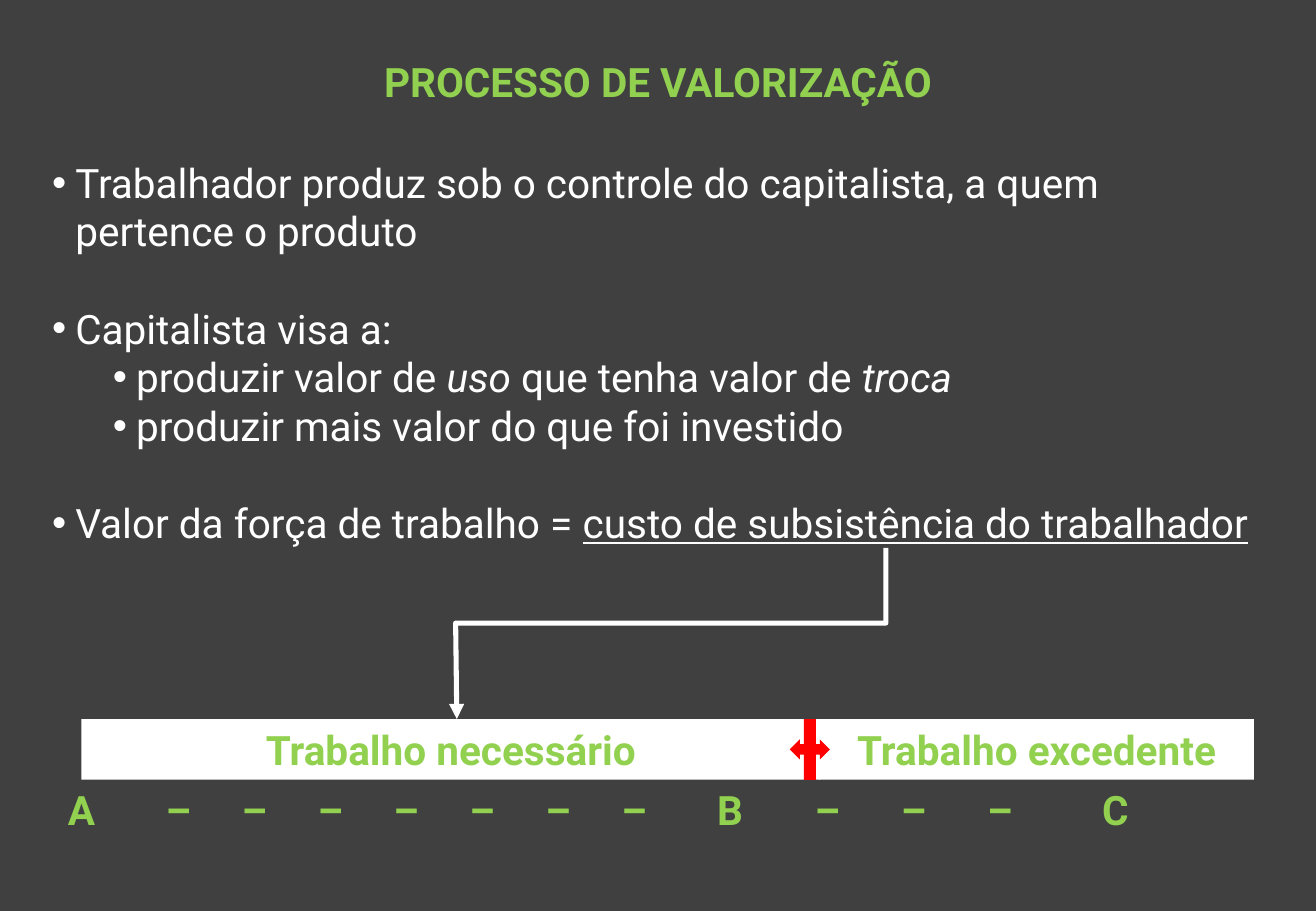
from dataclasses import dataclass

from lxml.etree import SubElement
from pptx import Presentation
from pptx.dml.color import RGBColor
from pptx.enum.shapes import MSO_SHAPE
from pptx.enum.text import MSO_ANCHOR, MSO_AUTO_SIZE, PP_ALIGN
from pptx.oxml.ns import qn
from pptx.util import Inches, Pt


@dataclass(frozen=True)
class Theme:
    back: RGBColor = RGBColor(0x40, 0x40, 0x40)
    white: RGBColor = RGBColor(0xFF, 0xFF, 0xFF)
    green: RGBColor = RGBColor(0x92, 0xD0, 0x50)
    red: RGBColor = RGBColor(0xFF, 0x00, 0x00)
    face: str = "Roboto"
    size: Pt = Pt(24)
    gap: Pt = Pt(28.8)
    line: Pt = Pt(3)


THEME = Theme()
BOLD = {"bold": True}
FRAME = {"word_wrap": True, "auto_size": MSO_AUTO_SIZE.SHAPE_TO_FIT_TEXT}

# Each item: level, space before, runs with their format
ITEMS = [
    (0, 0, [("Trabalhador produz sob o controle do capitalista, "
             "a quem pertence o produto", {})]),
    (0, THEME.gap, [("Capitalista visa a:", {})]),
    (1, 0, [("produzir valor de ", {}), ("uso", {"italic": True}),
            (" que tenha valor de ", {}), ("troca", {"italic": True})]),
    (1, 0, [("produzir mais valor do que foi investido", {})]),
    (0, THEME.gap, [("Valor da força de trabalho = ", {}),
                    ("custo de subsistência do trabalhador",
                     {"underline": True})]),
]


def apply(item, form):
    for name, value in form.items():
        setattr(item, name, value)


def place(shape, *box):
    names = ("left", "top", "width", "height")
    apply(shape, dict(zip(names, map(Inches, box))))


def write(para, text, color, form):
    run = para.add_run()
    run.text = text
    apply(run.font, {"name": THEME.face, "size": THEME.size, **form})
    run.font.color.rgb = color


def add_title(slide, text):
    title = slide.shapes.title
    place(title, 0, 0.42, 10.83, 0.5)
    apply(title.text_frame, FRAME)
    para = title.text_frame.paragraphs[0]
    para.alignment = PP_ALIGN.CENTER
    write(para, text, THEME.green, BOLD)


def add_list(slide, items):
    body = slide.placeholders[1]
    place(body, 0.33, 1.25, 10.17, 3.74)
    frame = body.text_frame
    apply(frame, {**FRAME, "vertical_anchor": MSO_ANCHOR.TOP})
    for index, (level, space, runs) in enumerate(items):
        para = frame.add_paragraph() if index else frame.paragraphs[0]
        props = para._p.get_or_add_pPr()
        props.set("marL", str(Inches(0.19 + 0.5 * level)))
        props.set("indent", str(Inches(-0.19)))
        SubElement(props, qn("a:buFont"), typeface="Arial")
        SubElement(props, qn("a:buChar"), char="•")
        apply(para, {"level": level, "space_before": Pt(0) + space})
        for text, form in runs:
            write(para, text, THEME.white, form)


def add_block(shapes, kind, color, box, text=""):
    block = shapes.add_shape(kind, *map(Inches, box))
    block.shadow.inherit = False
    block.fill.solid()
    block.fill.fore_color.rgb = color
    block.line.fill.background()
    if text:
        apply(block.text_frame, FRAME)
        para = block.text_frame.paragraphs[0]
        para.alignment = PP_ALIGN.CENTER
        write(para, text, THEME.green, BOLD)
    return block


def add_arrow(shapes, points):
    start, *rest = [tuple(map(Inches, point)) for point in points]
    build = shapes.build_freeform(*start)
    build.add_line_segments(rest, close=False)
    arrow = build.convert_to_shape()
    arrow.shadow.inherit = False
    arrow.fill.background()
    arrow.line.color.rgb = THEME.white
    arrow.line.width = THEME.line
    SubElement(arrow.line._get_or_add_ln(), qn("a:tailEnd"), type="triangle")


def add_scale(shapes):
    box = shapes.add_textbox(*map(Inches, (0.46, 6.41, 10.08, 0.5)))
    apply(box.text_frame, FRAME)
    para = box.text_frame.paragraphs[0]
    # Centred tab stops: seven dashes, B, three dashes, C
    stops = [0.91 + 0.625 * step for step in range(7)] + [5.45]
    stops += [6.25 + 0.71 * step for step in range(3)] + [8.62]
    tabs = SubElement(para._p.get_or_add_pPr(), qn("a:tabLst"))
    for stop in stops:
        SubElement(tabs, qn("a:tab"), pos=str(Inches(stop)), algn="ctr")
    marks = ["A"] + ["–"] * 7 + ["B"] + ["–"] * 3 + ["C"]
    write(para, "\t".join(marks), THEME.green, BOLD)


def add_chart_bar(shapes):
    # Arrow from the cost of living to necessary work
    add_arrow(shapes, [(7.29, 4.51), (7.29, 5.13), (3.75, 5.13), (3.76, 5.92)])
    # Two parts of the working day
    for left, width, text in [(0.67, 6.08, "Trabalho necessário"),
                              (6.74, 3.58, "Trabalho excedente")]:
        add_block(shapes, MSO_SHAPE.RECTANGLE, THEME.white,
                  (left, 5.92, width, 0.5), text)
    add_scale(shapes)
    # Movable border between the parts
    border = add_block(shapes, MSO_SHAPE.LEFT_RIGHT_ARROW_CALLOUT, THEME.red,
                       (6.5, 5.92, 0.33, 0.5))
    for index, value in enumerate((0.26, 0.25, 0.25, 0.3)):
        border.adjustments[index] = value


def main():
    deck = Presentation()
    apply(deck, {"slide_width": Inches(10.83), "slide_height": Inches(7.5)})
    slide = deck.slides.add_slide(deck.slide_layouts[1])
    slide.background.fill.solid()
    slide.background.fill.fore_color.rgb = THEME.back
    add_title(slide, "PROCESSO DE VALORIZAÇÃO")
    add_list(slide, ITEMS)
    add_chart_bar(slide.shapes.add_group_shape().shapes)
    deck.save("out.pptx")


if __name__ == "__main__":
    main()
